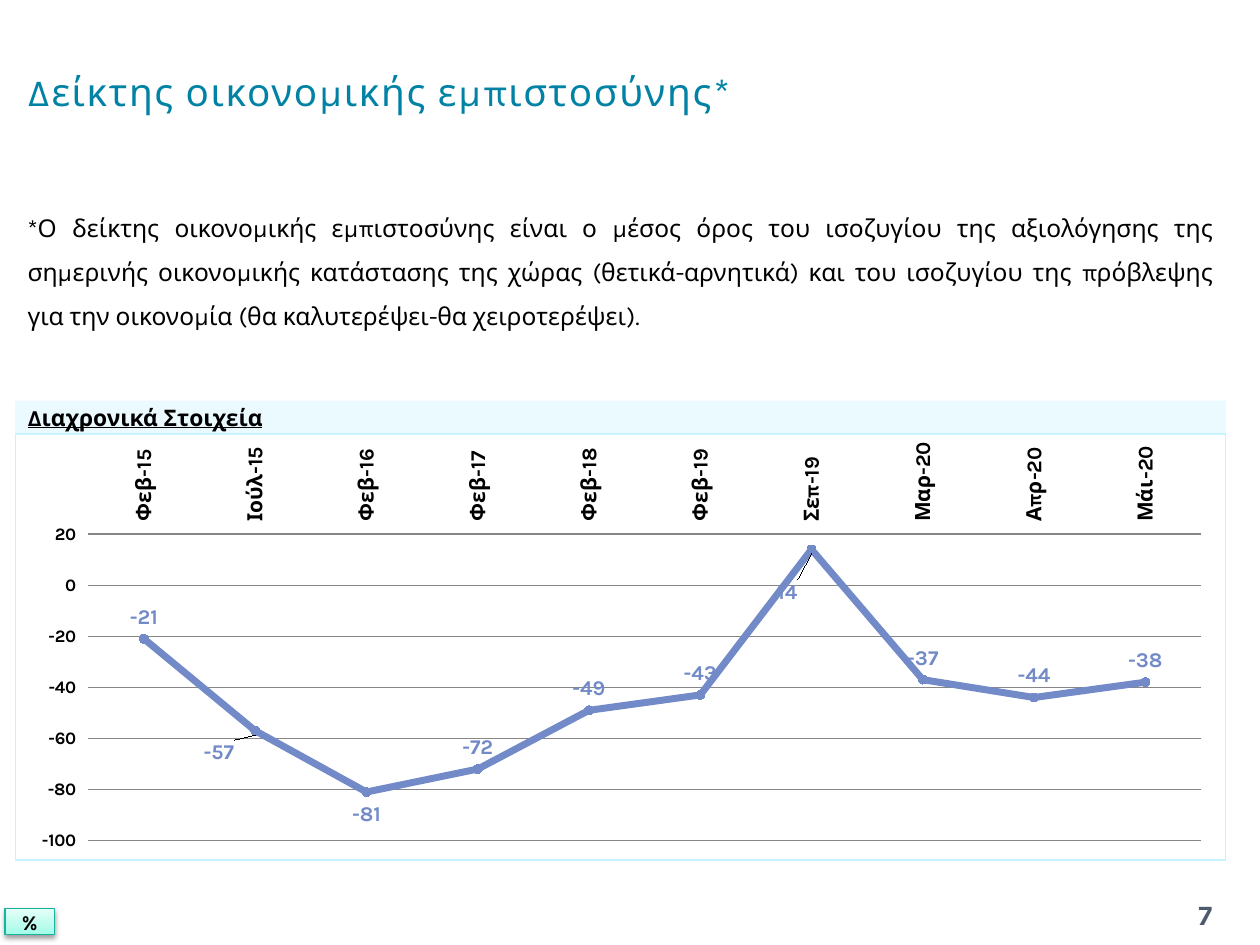
from lxml import etree
from pptx import Presentation
from pptx.chart.data import CategoryChartData
from pptx.dml.color import RGBColor
from pptx.enum.chart import XL_CHART_TYPE as ChartType, XL_LABEL_POSITION as LabelPos
from pptx.enum.chart import XL_MARKER_STYLE as Marker, XL_TICK_LABEL_POSITION as TickPos
from pptx.enum.chart import XL_TICK_MARK as TickMark
from pptx.enum.shapes import MSO_SHAPE as Shape
from pptx.enum.text import MSO_ANCHOR as Anchor, MSO_AUTO_SIZE as AutoSize, PP_ALIGN as Align
from pptx.oxml import parse_xml
from pptx.oxml.ns import nsdecls, qn
from pptx.util import Inches, Pt

FONT = "Karla"
COLORS = {
    "title": "0082A5", "text": "000000", "number": "4E5B6F", "series": "738AC8",
    "band": "C5F3FF", "grid": "868686", "badge_line": "16B39E",
}
BADGE_STOPS = [(0, "9DFDE8"), (35, "BBFCED"), (100, "E4FFF9")]
COLUMNS, ROWS = 100, 75
SLIDE_WIDTH, SLIDE_HEIGHT = Inches(10), Inches(7.5)
LEFT, CONTENT_WIDTH = 1.2, 96.1

TITLE = "Δείκτης οικονομικής εμπιστοσύνης*"
DEFINITION = (
    "*Ο δείκτης οικονομικής εμπιστοσύνης είναι ο μέσος όρος του ισοζυγίου της "
    "αξιολόγησης της σημερινής οικονομικής κατάστασης της χώρας (θετικά-αρνητικά) "
    "και του ισοζυγίου της πρόβλεψης για την οικονομία (θα καλυτερέψει-θα χειροτερέψει)."
)
CONFIDENCE = {
    "Φεβ-15": -21, "Ιούλ-15": -57, "Φεβ-16": -81, "Φεβ-17": -72, "Φεβ-18": -49,
    "Φεβ-19": -43, "Σεπ-19": 14, "Μαρ-20": -37, "Απρ-20": -44, "Μάι-20": -38,
}
LABELS_BELOW = {"Ιούλ-15": (-0.03, 0), "Φεβ-16": (0, 0), "Σεπ-19": (-0.02, 0.05)}


def color(name):
    return RGBColor.from_string(COLORS[name])


def grid(column, row, columns, rows):
    across, down = SLIDE_WIDTH / COLUMNS, SLIDE_HEIGHT / ROWS
    return [int(n) for n in (column * across, row * down, columns * across, rows * down)]


def style_font(font, size, shade, bold=False):
    font.name, font.size, font.bold = FONT, Pt(size), bold
    font.color.rgb = color(shade)


def write(shape, text, size, shade, bold=False, align=Align.LEFT):
    frame = shape.text_frame
    frame.word_wrap = True
    frame.auto_size = AutoSize.NONE
    frame.vertical_anchor = Anchor.MIDDLE
    para = frame.paragraphs[0]
    para.alignment = align
    span = para.add_run()
    span.text = text
    style_font(span.font, size, shade, bold)
    return para, span


def add_title(page):
    title = page.shapes.title
    title.left, title.top, title.width, title.height = grid(LEFT, 1.3, 68.5, 11.8)
    para, span = write(title, TITLE, 22, "title")
    span.font._element.set("spc", "100")


def add_text(page, area, *style, **options):
    return write(page.shapes.add_textbox(*grid(*area)), *style, **options)


def add_rectangle(page, area):
    box = page.shapes.add_shape(Shape.RECTANGLE, *grid(*area))
    box.shadow.inherit = False
    return box


def add_badge(page):
    box = add_rectangle(page, (0.4, 72.1, 3.9, 2.1))
    box.line.color.rgb = color("badge_line")
    box.line.width = Pt(0.75)
    stops = "".join(
        f'<a:gs pos="{share * 1000}"><a:srgbClr val="{shade}"/></a:gs>'
        for share, shade in BADGE_STOPS
    )
    properties = box._element.spPr
    properties.find(qn("a:prstGeom")).addnext(parse_xml(
        f'<a:gradFill {nsdecls("a")} rotWithShape="1"><a:gsLst>{stops}</a:gsLst>'
        '<a:lin ang="16200000" scaled="0"/></a:gradFill>'
    ))
    properties.find(qn("a:effectLst")).append(parse_xml(
        f'<a:outerShdw {nsdecls("a")} blurRad="{Pt(3.1)}" dist="{Pt(1.6)}" dir="5400000" '
        'rotWithShape="0"><a:srgbClr val="000000"><a:alpha val="38000"/></a:srgbClr></a:outerShdw>'
    ))
    write(box, "%", 12, "text", True, Align.CENTER)


def add_band(page):
    box = add_rectangle(page, (LEFT, 31.8, CONTENT_WIDTH, 2.6))
    box.fill.solid()
    box.fill.fore_color.rgb = color("band")
    shade = box._element.spPr.find(f'{qn("a:solidFill")}/{qn("a:srgbClr")}')
    etree.SubElement(shade, qn("a:alpha")).set("val", "35000")
    box.line.fill.background()
    para, span = write(box, "Διαχρονικά Στοιχεία\t", 13, "text", True)
    span.font.underline = True
    tabs = etree.SubElement(para._p.get_or_add_pPr(), qn("a:tabLst"))
    etree.SubElement(tabs, qn("a:tab"), pos=str(Inches(2.32)), algn="l")


def manual_layout(**values):
    parts = "".join(f'<c:{name} val="{value}"/>' for name, value in values.items())
    return parse_xml(
        f'<c:layout {nsdecls("c")}><c:manualLayout>{parts}</c:manualLayout></c:layout>'
    )


def style_axes(chart):
    months, scale = chart.category_axis, chart.value_axis
    for axis, size in ((months, 12), (scale, 10)):
        axis.minor_tick_mark = TickMark.NONE
        style_font(axis.tick_labels.font, size, "text", True)
    months.major_tick_mark = TickMark.NONE
    months.tick_label_position = TickPos.HIGH
    months.format.line.color.rgb = color("grid")
    months._element.find(f'{qn("c:txPr")}/{qn("a:bodyPr")}').set("rot", "-5400000")
    scale.major_tick_mark = TickMark.OUTSIDE
    scale.minimum_scale, scale.maximum_scale, scale.major_unit = -100, 20, 20
    scale.format.line.fill.background()
    scale.major_gridlines.format.line.color.rgb = color("grid")


def style_series(plot):
    series = plot.series[0]
    series.smooth = False
    series.format.line.color.rgb = color("series")
    series.format.line.width = Pt(4)
    series.marker.style, series.marker.size = Marker.CIRCLE, 5
    series.marker.format.fill.solid()
    series.marker.format.fill.fore_color.rgb = color("series")
    series.marker.format.line.color.rgb = color("series")
    labels = series.data_labels
    labels.show_value = True
    labels.position = LabelPos.ABOVE
    style_font(labels.font, 12, "series", True)
    for index, month in enumerate(CONFIDENCE):
        if month in LABELS_BELOW:
            label = series.points[index].data_label
            style_font(label.font, 12, "series", True)
            label.position = LabelPos.BELOW
            across, down = LABELS_BELOW[month]
            entry = labels._element.xpath(f'c:dLbl/c:idx[@val="{index}"]')[0]
            entry.addnext(manual_layout(x=across, y=down))


def add_confidence_chart(page):
    data = CategoryChartData()
    data.categories = list(CONFIDENCE)
    data.add_series("Series 1", list(CONFIDENCE.values()))
    area = grid(LEFT, 34.4, CONTENT_WIDTH, 33.9)
    chart = page.shapes.add_chart(ChartType.LINE_MARKERS, *area, data).chart
    chart.has_legend = chart.has_title = False
    style_font(chart.font, 18, "text")
    chart.plots[0].vary_by_categories = False
    style_axes(chart)
    style_series(chart.plots[0])
    plot_area = chart.element.xpath("c:chart/c:plotArea")[0]
    for layout in plot_area.findall(qn("c:layout")):
        plot_area.remove(layout)
    plot_area.insert(0, manual_layout(
        layoutTarget="inner", xMode="edge", yMode="edge", x=0.06, y=0.235, w=0.92, h=0.72))
    chart.element.find(qn("c:chart")).addnext(parse_xml(
        f'<c:spPr {nsdecls("c", "a")}><a:noFill/><a:ln w="{Pt(0.75)}"><a:solidFill>'
        f'<a:srgbClr val="{COLORS["band"]}"/></a:solidFill></a:ln></c:spPr>'
    ))


def main():
    deck = Presentation()
    deck.slide_width, deck.slide_height = SLIDE_WIDTH, SLIDE_HEIGHT
    page = deck.slides.add_slide(deck.slide_layouts[5])
    add_title(page)
    add_text(page, (91.7, 70.6, 7.9, 4), "7", 16, "number", bold=True, align=Align.CENTER)
    para, span = add_text(page, (LEFT, 15.2, CONTENT_WIDTH, 11.6), DEFINITION, 14, "text",
                          align=Align.JUSTIFY)
    para.line_spacing = 1.5
    add_badge(page)
    add_confidence_chart(page)
    add_band(page)
    deck.save("out.pptx")


if __name__ == "__main__":
    main()
